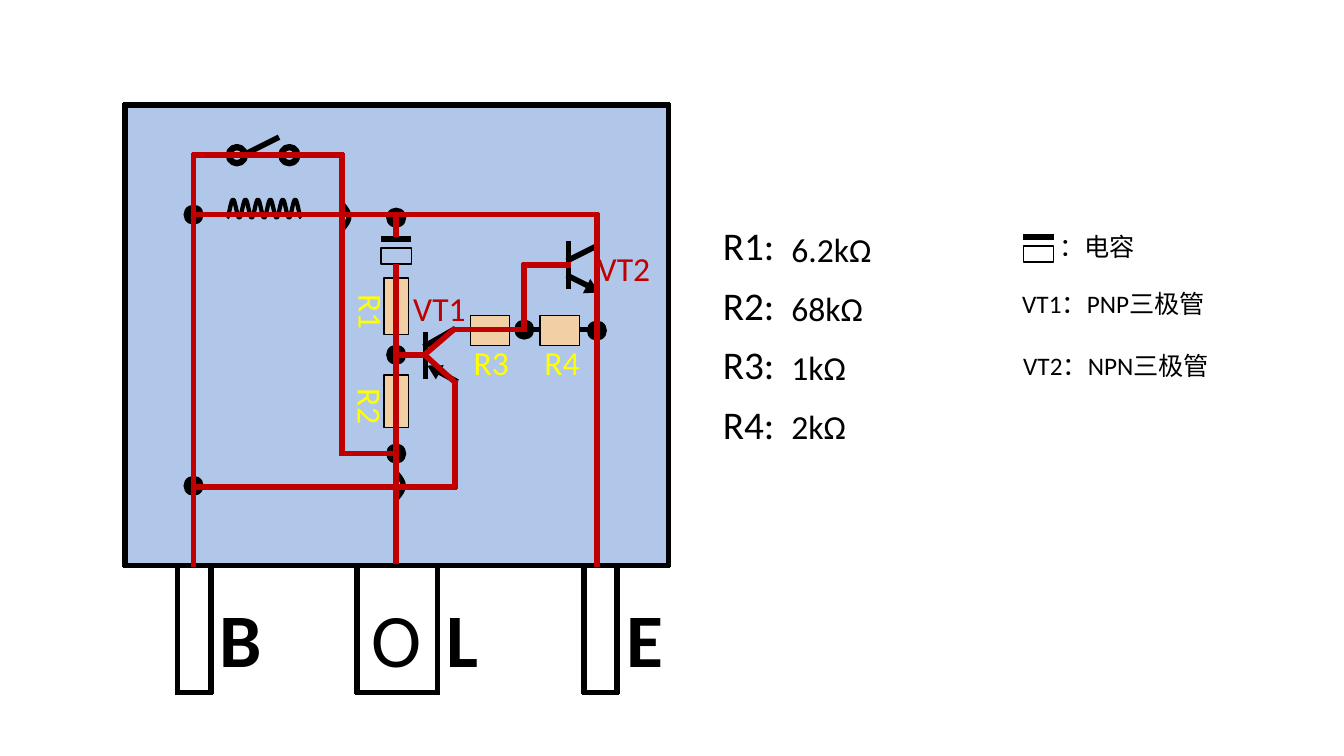
from itertools import pairwise
from math import cos, hypot, pi, sin
from lxml.etree import SubElement
from pptx import Presentation
from pptx.dml.color import RGBColor
from pptx.enum.shapes import MSO_CONNECTOR, MSO_SHAPE
from pptx.enum.text import MSO_AUTO_SIZE
from pptx.oxml.ns import qn
from pptx.util import Inches, Pt

BLACK, RED, YELLOW, BLUE, TAN = "000000", "C00000", "FFFF00", "B0C7EA", "F3CFA5"

# Grid of the circuit, in inches: columns are x, rows are y
B, LOOP, O, VT1_BASE, VT1_OUT, MID, VT2_BASE, E = 1.92, 3.39, 3.93, 4.22, 4.51, 5.2, 5.64, 5.92
SWITCH, COIL, VT2_ROW, R_ROW, VT1_ROW, JOIN, RETURN, FOOT = 1.54, 2.13, 2.63, 3.27, 3.52, 4.5, 4.83, 5.61
LEFT, TOP, RIGHT, PIN_END = 1.24, 1.04, 6.63, 6.87
CAP_END = 2.62

# Wires as routes of corner points
PINS = [(1.76, 2.09), (3.54, 4.34), (5.79, 6.12)]
HOUSING = [(LEFT, TOP), (RIGHT, TOP), (RIGHT, FOOT), (LEFT, FOOT), (LEFT, TOP)]
BLACK_ROUTES = [
    HOUSING,
    *[[(a, FOOT), (a, PIN_END), (b, PIN_END), (b, FOOT)] for a, b in PINS],
    [(2.28, SWITCH), (B, SWITCH), (B, FOOT)],
    [(2.94, SWITCH), (LOOP, SWITCH), (LOOP, 2.03)],
    [(LOOP, 2.27), (LOOP, JOIN), (O, JOIN)],
    [(2.99, COIL), (E, COIL), (E, 2.45)],
    [(2, COIL), (2.25, COIL)],
    [(O, 4.93), (O, FOOT)],
    [(B, RETURN), (VT1_OUT, RETURN), (VT1_OUT, 3.79)],
    [(VT1_OUT, R_ROW), (E, R_ROW), (E, FOOT)],
    [(E, R_ROW), (E, 2.89)],
    [(MID, R_ROW), (MID, VT2_ROW), (VT2_BASE, VT2_ROW)],
    [(O, COIL), (O, 2.37)],
]
TRANSISTOR_LINES = [
    [(2.41, SWITCH), (2.75, 1.37)],  # switch lever
    [(4.52, 3.78), (4.32, 3.67)], [(O, VT1_ROW), (VT1_BASE, VT1_ROW)],
    [(VT1_BASE, 3.31), (VT1_BASE, 3.74)], [(VT1_BASE, 3.43), (4.5, R_ROW)],
    [(5.92, 2.44), (VT2_BASE, 2.58)], [(VT2_BASE, 2.41), (VT2_BASE, 2.85)],
    [(5.82, 2.83), (VT2_BASE, 2.74)],
]
RED_ROUTES = [
    [(B, FOOT), (B, SWITCH), (LOOP, SWITCH), (LOOP, JOIN), (O, JOIN), (O, FOOT - 0.03)],
    [(B, RETURN), (VT1_OUT, RETURN), (VT1_OUT, 3.79), (4.21, 3.52), (4.5, R_ROW),
     (MID, R_ROW), (MID, VT2_ROW), (VT2_BASE, VT2_ROW)],
    [(O, VT1_ROW), (VT1_BASE, VT1_ROW)],
    [(B, COIL), (O, COIL), (E, COIL), (E, FOOT)],
    [(O, COIL), (O, 2.33)],
    [(O, VT1_ROW), (O, JOIN)],
]

# Symbols: centre and size
RESISTORS = [(O, 3.04, 0.24, 0.56), (O, 3.98, 0.24, 0.52),
             (4.86, 3.28, 0.39, 0.3), (5.55, 3.28, 0.39, 0.3)]
DOTS = [(B, COIL), (O, 2.16), (O, VT1_ROW), (O, JOIN), (B, 4.82), (MID, R_ROW), (E, 3.28)]
CONTACTS = [(2.35, SWITCH), (2.87, SWITCH)]
ARROWS = [(4.3, 3.66, 298.7), (5.88, 2.87, 116.8)]
BRIDGES = [(LOOP, 2.02), (O, 4.69)]

# Texts: text, left, top, width, height
PIN_LABELS = [("B", 2.08, 0.62, True), ("L", 4.33, 0.52, True),
              ("E", 6.12, 0.57, True), ("O", 3.59, 0.7, False)]
R_LABELS = [("R3", 4.6, 3.34, 0.55, 0.5), ("R4", 5.3, 3.34, 0.55, 0.5)]
R_LABELS_DOWN = [("R1", 3.33, 2.82, 0.61, 0.45), ("R2", 3.32, 3.76, 0.61, 0.45)]
VT_LABELS = [("VT1", 4, 2.81, 0.73, 0.5), ("VT2", 5.83, 2.41, 0.73, 0.5)]
VALUES = [("R1:", "6.2kΩ", 1), ("R2:", "68kΩ", 0.92), ("R3:", "1kΩ", 0.75), ("R4:", "2kΩ", 0.75)]
LEGEND = [("：电容", 10.41, 2.25, 1.48), ("VT1：PNP三极管", 10.04, 2.81, 2.44),
          ("VT2：NPN三极管", 10.05, 3.43, 2.44)]

prs = Presentation()
prs.slide_width, prs.slide_height = Inches(13.33), Inches(7.5)
s = prs.slides.add_slide(prs.slide_layouts[6])


def color(hex_code):
    return RGBColor.from_string(hex_code)


def style(sp, fill=None, line=None, width=1):
    sp.shadow.inherit = False
    if fill:
        sp.fill.solid()
        sp.fill.fore_color.rgb = color(fill)
    else:
        sp.fill.background()
    if line:
        sp.line.color.rgb = color(line)
        sp.line.width = Pt(width)
    else:
        sp.line.fill.background()
    return sp


def symbol(kind, x, y, w, h, **look):
    """A shape centred on x, y."""
    sp = s.shapes.add_shape(kind, Inches(x - w / 2), Inches(y - h / 2), Inches(w), Inches(h))
    return style(sp, **look)


def wire(start, end, hex_code=BLACK, overlap=0.02):
    """A line that runs slightly past both ends, so that corners close."""
    (x1, y1), (x2, y2) = start, end
    length = hypot(x2 - x1, y2 - y1)
    dx, dy = overlap * (x2 - x1) / length, overlap * (y2 - y1) / length
    c = s.shapes.add_connector(MSO_CONNECTOR.STRAIGHT, Inches(x1 - dx), Inches(y1 - dy),
                               Inches(x2 + dx), Inches(y2 + dy))
    c.line.color.rgb = color(hex_code)
    c.line.width = Pt(4)
    SubElement(c._element.spPr, qn("a:effectLst"))
    return c


def draw_routes(routes, hex_code=BLACK):
    for route in routes:
        for start, end in pairwise(route):
            wire(start, end, hex_code)


def curve(points, width):
    pts = [(Inches(x), Inches(y)) for x, y in points]
    fb = s.shapes.build_freeform(*pts[0])
    fb.add_line_segments(pts[1:], close=False)
    style(fb.convert_to_shape(), line=BLACK, width=width)


def capacitor(x, bottom):
    wire((x - 0.15, bottom - 0.25), (x + 0.15, bottom - 0.25), overlap=0)
    return symbol(MSO_SHAPE.RECTANGLE, x, bottom - 0.08, 0.3, 0.16, line=BLACK)


def label(text, x, y, w, h, size, hex_code=BLACK, bold=False, wrap=False, down=False):
    tf = s.shapes.add_textbox(Inches(x), Inches(y), Inches(w), Inches(h)).text_frame
    tf.word_wrap = wrap
    tf.auto_size = MSO_AUTO_SIZE.SHAPE_TO_FIT_TEXT
    if down:
        tf._txBody.bodyPr.set("vert", "eaVert")
    p = tf.paragraphs[0]
    p.text = text
    p.font.name, p.font.size, p.font.bold = "Calibri", Pt(size), bold
    p.font.color.rgb = color(hex_code)


# Housing and black wiring
symbol(MSO_SHAPE.RECTANGLE, (LEFT + RIGHT) / 2, (TOP + FOOT) / 2, RIGHT - LEFT, FOOT - TOP, fill=BLUE)
draw_routes(BLACK_ROUTES)
cap = capacitor(O, CAP_END)
wire((O, CAP_END), (O, 4.71), overlap=0).begin_connect(cap, 2)

# Components
for x, y, w, h in RESISTORS:
    symbol(MSO_SHAPE.RECTANGLE, x, y, w, h, fill=TAN, line=BLACK)
draw_routes(TRANSISTOR_LINES)
for x, y, angle in ARROWS:
    symbol(MSO_SHAPE.ISOSCELES_TRIANGLE, x, y, 0.16, 0.14, fill=BLACK).rotation = angle
for x, y in DOTS:
    symbol(MSO_SHAPE.OVAL, x, y, 0.2, 0.2, fill=BLACK)
for x, y in CONTACTS:
    symbol(MSO_SHAPE.OVAL, x, y, 0.16, 0.16, line=BLACK, width=4.5)

# Coil of six turns, and the arcs where wires cross
curve([(2.25 + 0.74 * i / 96, 2.07 + 0.09 * cos(12 * pi * i / 96)) for i in range(97)], 3)
for x, y in BRIDGES:
    curve([(x + 0.07 * sin(pi * i / 16), y + 0.26 * i / 16) for i in range(17)], 3.75)

# Labels
for text, x, w, bold in PIN_LABELS:
    label(text, x, 5.82, w, 1.01, 54, bold=bold)
for place in R_LABELS_DOWN:
    label(*place, 24, YELLOW, down=True)
for place in R_LABELS:
    label(*place, 24, YELLOW)
for place in VT_LABELS:
    label(*place, 24, RED)
for i, (name, value, w) in enumerate(VALUES):
    label(name, 7.07, 2.15 + 0.59 * i, 0.72, 0.57, 28)
    label(value, 7.75, 2.22 + 0.585 * i, w, 0.5, 24)

# Red wiring on top
draw_routes(RED_ROUTES, RED)
wire((O, CAP_END), (O, VT1_ROW), RED, overlap=0).begin_connect(cap, 2)

# Legend
capacitor(10.3, 2.6)
for text, x, y, w in LEGEND:
    label(text, x, y, w, 0.4, 18, wrap=True)

prs.save("out.pptx")
